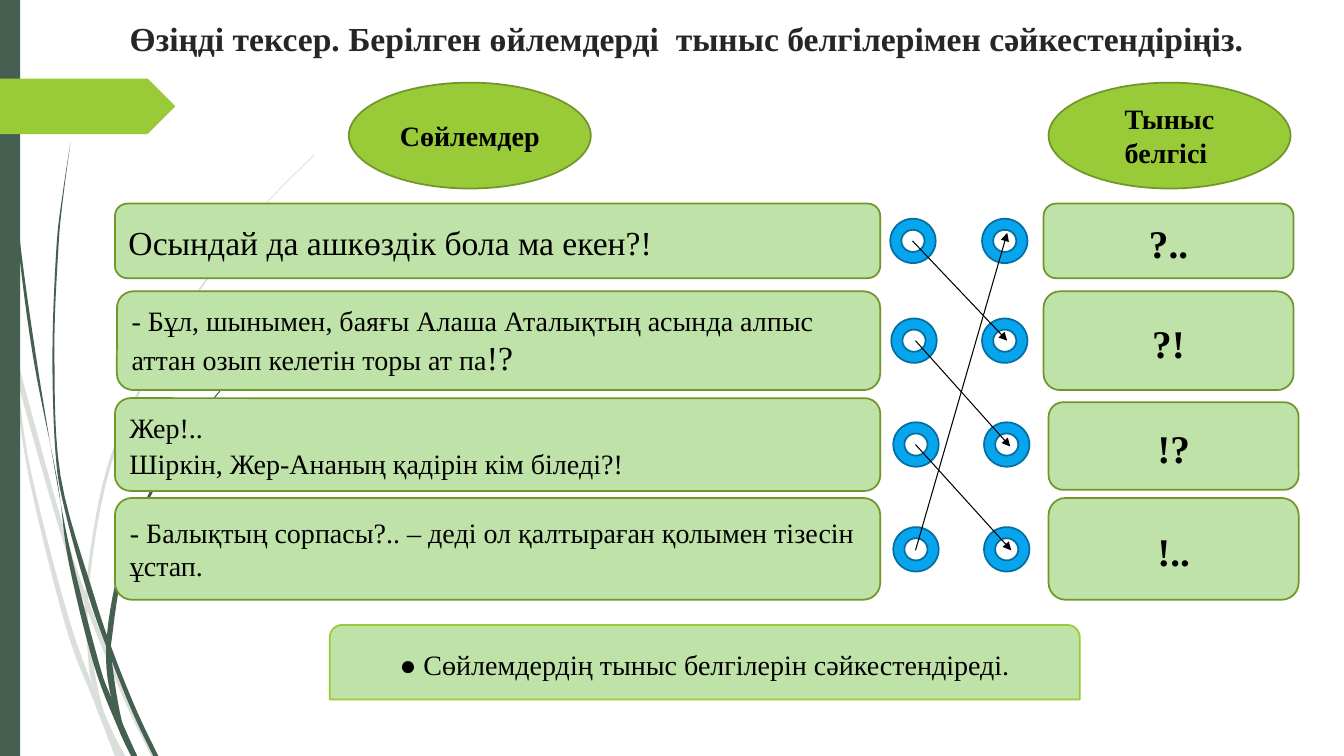
"""Build the matching exercise on sentences and punctuation marks."""
from lxml.etree import SubElement
from pptx import Presentation
from pptx.dml.color import RGBColor
from pptx.enum.shapes import MSO_CONNECTOR as Connector, MSO_SHAPE as Shape
from pptx.enum.text import MSO_ANCHOR as Anchor, MSO_AUTO_SIZE as AutoSize, PP_ALIGN as Align
from pptx.oxml.ns import qn
from pptx.util import Inches, Pt

WIDTH, HEIGHT = 13.33, 7.5
FONT = "Times New Roman"
DARK, PALE, LIME, OLIVE, MINT = "455F51", "DADFDC", "99CB38", "719629", "BFE2A8"

ROWS = [
    (2.02, 0.74, 2.02, 0.74), (2.89, 0.98, 2.89, 0.98),
    (3.95, 0.92, 3.99, 0.87), (4.94, 1.01, 4.94, 1.01),
]
SENTENCES = [
    (1.14, 24, 1.07, ["Осындай да ашкөздік бола ма екен?!"]),
    (1.16, 20, 1, ["- Бұл, шынымен, баяғы Алаша Аталықтың асында алпыс аттан озып келетін торы ат па"]),
    (1.14, 20, 1.07, ["Жер!..", "Шіркін, Жер-Ананың қадірін кім біледі?!"]),
    (1.14, 20, 1, ["- Балықтың сорпасы?.. – деді ол қалтыраған қолымен тізесін ұстап."]),
]
SENTENCE_RIGHT = 8.73
MARKS = [(10.35, "?.."), (10.35, "?!"), (10.4, "!?"), (10.4, "!..")]
RINGS = [(8.83, 9.74, 2.17), (8.84, 9.74, 3.16), (8.86, 9.76, 4.19), (8.86, 9.76, 5.23)]
MATCHES = [
    (9.05, 2.39, 9.99, 3.38), (9.08, 3.38, 10.02, 4.43),
    (9.08, 4.41, 10.03, 5.46), (9.08, 5.46, 9.99, 2.31),
]
GRASS = [
    (PALE, [(0, 2.99), (0.1, 3.44), (0.28, 4.7), (0.65, 6.21), (0.92, 6.93), (1.14, 7.5)],
     [(1.24, 7.5), (1.05, 7.11), (0.7, 6.19), (0.31, 4.69), (0.17, 3.76), (0.09, 3.22), (0, 2.82)]),
    (PALE, [(0.14, 3.45), (0.17, 3.76), (0.58, 5.22), (0.84, 5.99), (1.23, 6.94), (1.5, 7.5)],
     [(1.55, 7.5), (1.27, 6.92), (0.92, 6.07), (0.62, 5.2), (0.14, 3.45)]),
    (PALE, [(3.12, 1.53), (2.68, 1.97), (2.28, 2.44), (1.58, 3.48), (1.07, 4.61),
            (0.85, 5.84), (0.87, 6.46), (0.93, 6.83), (1.19, 7.5)],
     [(1.24, 7.5), (1.03, 7.06), (0.91, 6.46), (0.88, 5.84), (1.1, 4.62), (1.6, 3.49),
      (2.29, 2.45), (2.68, 1.98), (3.12, 1.54)]),
    (DARK, [(0.03, 0), (0.07, 1.1), (0.17, 2.33), (0.33, 3.55), (0.57, 4.77), (0.68, 5.57),
            (0.93, 6.59), (1.17, 7.22), (1.3, 7.5)],
     [(1.36, 7.5), (1.1, 6.91), (0.98, 6.57), (0.72, 5.56), (0.57, 4.81), (0.36, 3.55),
      (0.19, 2.32), (0.08, 1.09), (0.04, 0)]),
    (DARK, [(0.7, 1.41), (0.62, 1.93), (0.56, 2.45), (0.52, 3.49), (0.55, 4.49), (0.64, 5.05),
            (0.88, 5.92), (1.11, 6.56), (1.32, 7.08), (1.52, 7.5)],
     [(1.57, 7.5), (1.36, 7.06), (1.13, 6.49), (0.93, 5.9), (0.6, 4.72), (0.54, 3.49),
      (0.58, 2.45), (0.63, 1.93), (0.7, 1.41)]),
    (DARK, [(2.6, 3.44), (2.31, 3.73), (2.04, 4.05), (1.56, 4.74), (1.22, 5.51), (1.06, 6.31),
            (1.1, 6.91), (1.33, 7.5)],
     [(1.36, 7.5), (1.21, 7.16), (1.11, 6.56), (1.11, 6.33), (1.25, 5.52), (1.58, 4.76),
      (2.05, 4.06), (2.31, 3.74), (2.61, 3.44)]),
]


def paint(color_format, color):
    """Give a fill, line or font a solid hex colour."""
    if hasattr(color_format, "solid"):
        color_format.solid()
        color_format = color_format.fore_color
    else:
        color_format = color_format.color
    color_format.rgb = RGBColor.from_string(color)


def dress(shape, fill, outline=None):
    """Set a shape's fill and outline and remove its shadow."""
    shape.shadow.inherit = False
    paint(shape.fill, fill)
    if outline:
        paint(shape.line, outline)
        shape.line.width = Pt(1.25)
    else:
        shape.line.fill.background()


def add_figure(slide, kind, box, fill, outline=None):
    """Add a preset shape in a box of left, top, width and height."""
    shape = slide.shapes.add_shape(kind, *map(Inches, box))
    dress(shape, fill, outline)
    return shape


def write(shape, lines, size, bold=False, align=Align.CENTER, spacing=1, color="000000"):
    """Write lines as paragraphs of one format."""
    frame = shape.text_frame
    frame.word_wrap = True
    frame.text = "\n".join(lines)
    for paragraph in frame.paragraphs:
        paragraph.alignment = align
        paragraph.line_spacing = spacing
        paragraph.font.name = FONT
        paragraph.font.size = Pt(size)
        paragraph.font.bold = bold
        paint(paragraph.font, color)


def smooth(points, steps=6):
    """Return points of a Catmull-Rom curve through the given ones."""
    padded = [points[0], *points, points[-1]]
    curve = []
    for a, b, c, d in zip(padded, padded[1:], padded[2:], padded[3:]):
        for t in (step / steps for step in range(steps)):
            curve.append(tuple(
                (2 * q + (r - p) * t + (2 * p - 5 * q + 4 * r - s) * t ** 2
                 + (3 * q - p - 3 * r + s) * t ** 3) / 2
                for p, q, r, s in zip(a, b, c, d)))
    return curve + [points[-1]]


def add_blade(slide, color, down, up):
    """Draw a grass blade between two smooth edges."""
    start, *rest = [(Inches(x), Inches(y)) for x, y in smooth(down) + smooth(up)]
    builder = slide.shapes.build_freeform(*start, scale=1.0)
    builder.add_line_segments(rest, close=True)
    dress(builder.convert_to_shape(), color)


def add_arrow(slide, ends):
    """Draw a thin black arrow."""
    arrow = slide.shapes.add_connector(Connector.STRAIGHT, *map(Inches, ends))
    paint(arrow.line, "000000")
    arrow.line.width = Pt(0.75)
    SubElement(arrow.line._get_or_add_ln(), qn("a:tailEnd"), type="triangle")
    SubElement(arrow._element.spPr, qn("a:effectLst"))


def add_title(slide, text):
    """Place the heading across the top in the title placeholder."""
    title = slide.shapes.title
    title.left, title.top, title.width, title.height = map(Inches, (0.29, 0.13, 13.04, 0.6))
    write(title, [text], 24, bold=True, color="262626")
    title.text_frame.auto_size = AutoSize.NONE
    title.text_frame.vertical_anchor = Anchor.TOP


def add_backdrop(slide):
    """Draw the grass, the side band and the tag."""
    for blade in GRASS:
        add_blade(slide, *blade)
    add_figure(slide, Shape.RECTANGLE, (0, 0, 0.2, HEIGHT), DARK)
    add_figure(slide, Shape.PENTAGON, (0, 0.78, 1.74, 0.55), LIME)


def add_exercise(slide):
    """Lay out sentences, marks, rings and matching arrows."""
    for left, heading in ((3.46, "Сөйлемдер"), (10.4, "Тыныс белгісі ")):
        oval = add_figure(slide, Shape.OVAL, (left, 0.82, 2.4, 1.05), LIME, OLIVE)
        write(oval, [heading], 20, bold=True)
    cards = []
    for row, sentence, (mark_left, mark) in zip(ROWS, SENTENCES, MARKS):
        top, height, mark_top, mark_height = row
        left, size, spacing, lines = sentence
        box = (left, top, SENTENCE_RIGHT - left, height)
        card = add_figure(slide, Shape.ROUNDED_RECTANGLE, box, MINT, OLIVE)
        write(card, lines, size, align=Align.LEFT, spacing=spacing)
        cards.append(card)
        box = (mark_left, mark_top, 2.48, mark_height)
        write(add_figure(slide, Shape.ROUNDED_RECTANGLE, box, MINT, OLIVE), [mark], 28, bold=True, spacing=1.07)
    ending = cards[1].text_frame.paragraphs[0].add_run()
    ending.text = "!?"
    ending.font.size = Pt(24)
    for *lefts, top in RINGS:
        for left in lefts:
            add_figure(slide, Shape.DONUT, (left, top, 0.45, 0.44), "08A5EF", "056EA0")
    for ends in MATCHES:
        add_arrow(slide, ends)


def main():
    """Build and save the slide."""
    presentation = Presentation()
    presentation.slide_width, presentation.slide_height = Inches(WIDTH), Inches(HEIGHT)
    slide = presentation.slides.add_slide(presentation.slide_layouts[5])
    add_backdrop(slide)
    add_title(slide, "Өзіңді тексер. Берілген өйлемдерді  тыныс белгілерімен сәйкестендіріңіз.")
    add_exercise(slide)
    goal = add_figure(slide, Shape.ROUND_2_SAME_RECTANGLE, (3.27, 6.2, 7.44, 0.74), MINT, LIME)
    write(goal, ["● Сөйлемдердің тыныс белгілерін сәйкестендіреді."], 20)
    presentation.save("out.pptx")


if __name__ == "__main__":
    main()
